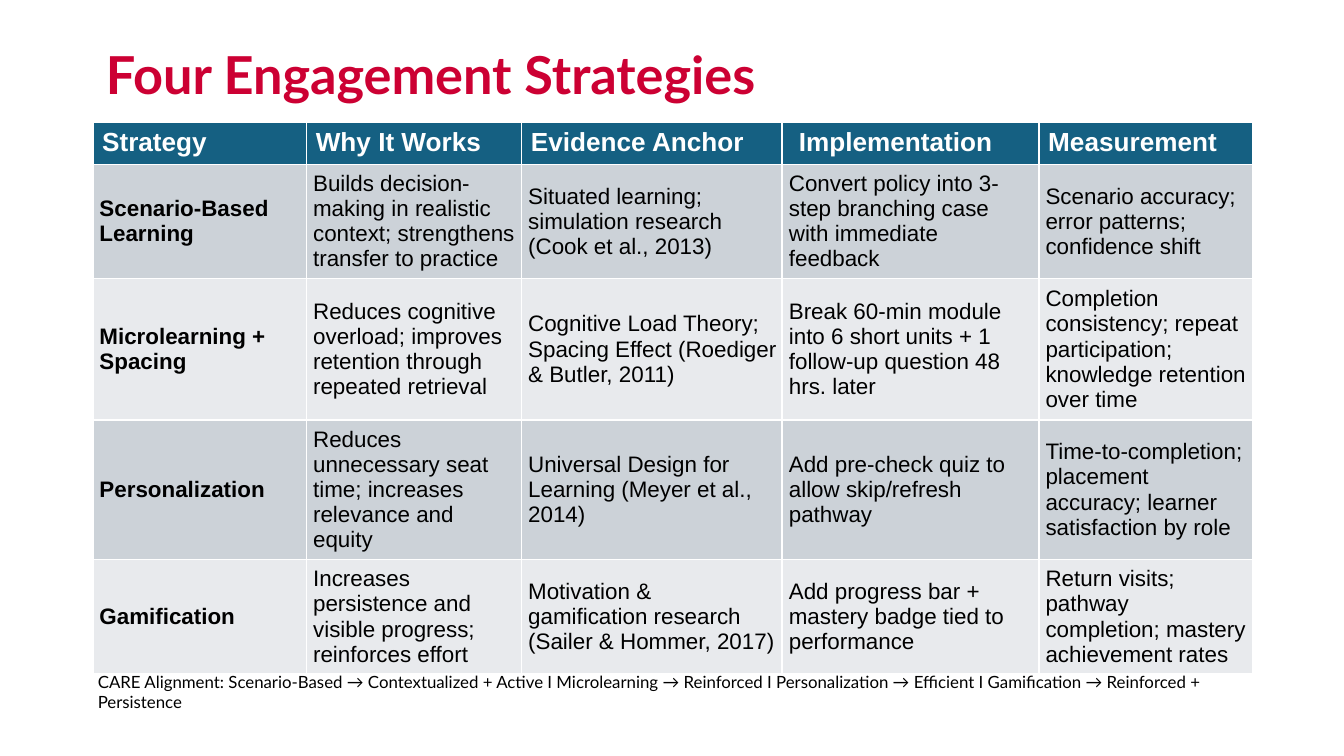
from pptx import Presentation
from pptx import util as u
from pptx.dml.color import RGBColor
from pptx.enum import text

COLORS = {
    "title": "CC0033",
    "header": "156082",
    "odd": "CCD2D8",
    "even": "E8EAED",
    "white": "FFFFFF",
    "black": "000000",
}
COLUMN_WIDTHS = [1.59, 1.6, 1.94, 1.91, 1.59]
ROW_HEIGHTS = [0.3, 0.85, 1.05, 0.85, 0.85]
STRATEGIES = [
    ["Strategy", "Why It Works", "Evidence Anchor", " Implementation", "Measurement"],
    ["Scenario-Based Learning",
     "Builds decision-making in realistic context; strengthens transfer to practice",
     "Situated learning; simulation research (Cook et al., 2013)",
     "Convert policy into 3-step branching case with immediate feedback",
     "Scenario accuracy; error patterns; confidence shift"],
    ["Microlearning + Spacing",
     "Reduces cognitive overload; improves retention through repeated retrieval",
     "Cognitive Load Theory; Spacing Effect (Roediger & Butler, 2011)",
     "Break 60-min module into 6 short units + 1 follow-up question 48 hrs. later",
     "Completion consistency; repeat participation; knowledge retention over time"],
    ["Personalization",
     "Reduces unnecessary seat time; increases relevance and equity",
     "Universal Design for Learning (Meyer et al., 2014)",
     "Add pre-check quiz to allow skip/refresh pathway",
     "Time-to-completion; placement accuracy; learner satisfaction by role"],
    ["Gamification",
     "Increases persistence and visible progress; reinforces effort",
     "Motivation & gamification research (Sailer & Hommer, 2017)",
     "Add progress bar + mastery badge tied to performance",
     "Return visits; pathway completion; mastery achievement rates"],
]
CARE_NOTE = (
    "CARE Alignment: Scenario-Based → Contextualized + Active I "
    "Microlearning → Reinforced I Personalization → Efficient I "
    "Gamification → Reinforced + Persistence"
)


class SlideBuilder:
    def __init__(self, page):
        self.page = page
        self.heading_font = "Lato"
        self.table_font = "Arial"

    def add_run(self, para, words, size, font, color, bold=False):
        span = para.add_run()
        span.text = words
        span.font.size = u.Pt(size)
        span.font.name = font
        span.font.bold = bold
        span.font.color.rgb = RGBColor.from_string(COLORS[color])

    def add_text(self, words, place, size, color, bold=False, anchor=text.MSO_ANCHOR.TOP):
        box = self.page.shapes.add_textbox(*[u.Inches(length) for length in place])
        frame = box.text_frame
        frame.word_wrap = True
        frame.vertical_anchor = anchor
        self.add_run(frame.paragraphs[0], words, size, self.heading_font, color, bold)

    def add_table(self, rows, left, top):
        """Add the table; its default style supplies the white cell borders."""
        place = [left, top, sum(COLUMN_WIDTHS), sum(ROW_HEIGHTS)]
        table = self.page.shapes.add_table(
            len(rows), len(COLUMN_WIDTHS), *[u.Inches(length) for length in place]
        ).table
        for column, width in zip(table.columns, COLUMN_WIDTHS):
            column.width = u.Inches(width)
        for row, height in zip(table.rows, ROW_HEIGHTS):
            row.height = u.Inches(height)
        for row_index, row in enumerate(rows):
            for column_index, words in enumerate(row):
                cell = table.cell(row_index, column_index)
                self.fill_cell(cell, words, row_index, column_index)

    def fill_cell(self, cell, words, row_index, column_index):
        is_header = row_index == 0
        left, right, edge = (0.07, 0.07, 0.04) if is_header else (0.05, 0.04, 0.02)
        cell.margin_left, cell.margin_right = u.Inches(left), u.Inches(right)
        cell.margin_top = cell.margin_bottom = u.Inches(edge)
        if is_header:
            fill, size, color = "header", 14, "white"
        else:
            fill, size, color = "odd" if row_index % 2 else "even", 12, "black"
            cell.vertical_anchor = text.MSO_ANCHOR.MIDDLE
        cell.fill.solid()
        cell.fill.fore_color.rgb = RGBColor.from_string(COLORS[fill])
        self.add_run(cell.text_frame.paragraphs[0], words, size, self.table_font,
                     color, bold=is_header or column_index == 0)


def main():
    deck = Presentation()
    deck.slide_width = u.Inches(10)
    deck.slide_height = deck.slide_width * 9 // 16
    builder = SlideBuilder(deck.slides.add_slide(deck.slide_layouts[6]))
    builder.add_text("Four Engagement Strategies", (0.69, 0, 8.62, 1.09), 28, "title",
                     bold=True, anchor=text.MSO_ANCHOR.MIDDLE)
    builder.add_table(STRATEGIES, 0.69, 0.91)
    builder.add_text(CARE_NOTE, (0.63, 4.95, 8.84, 0.25), 9, "black")
    deck.save("out.pptx")


if __name__ == "__main__":
    main()
